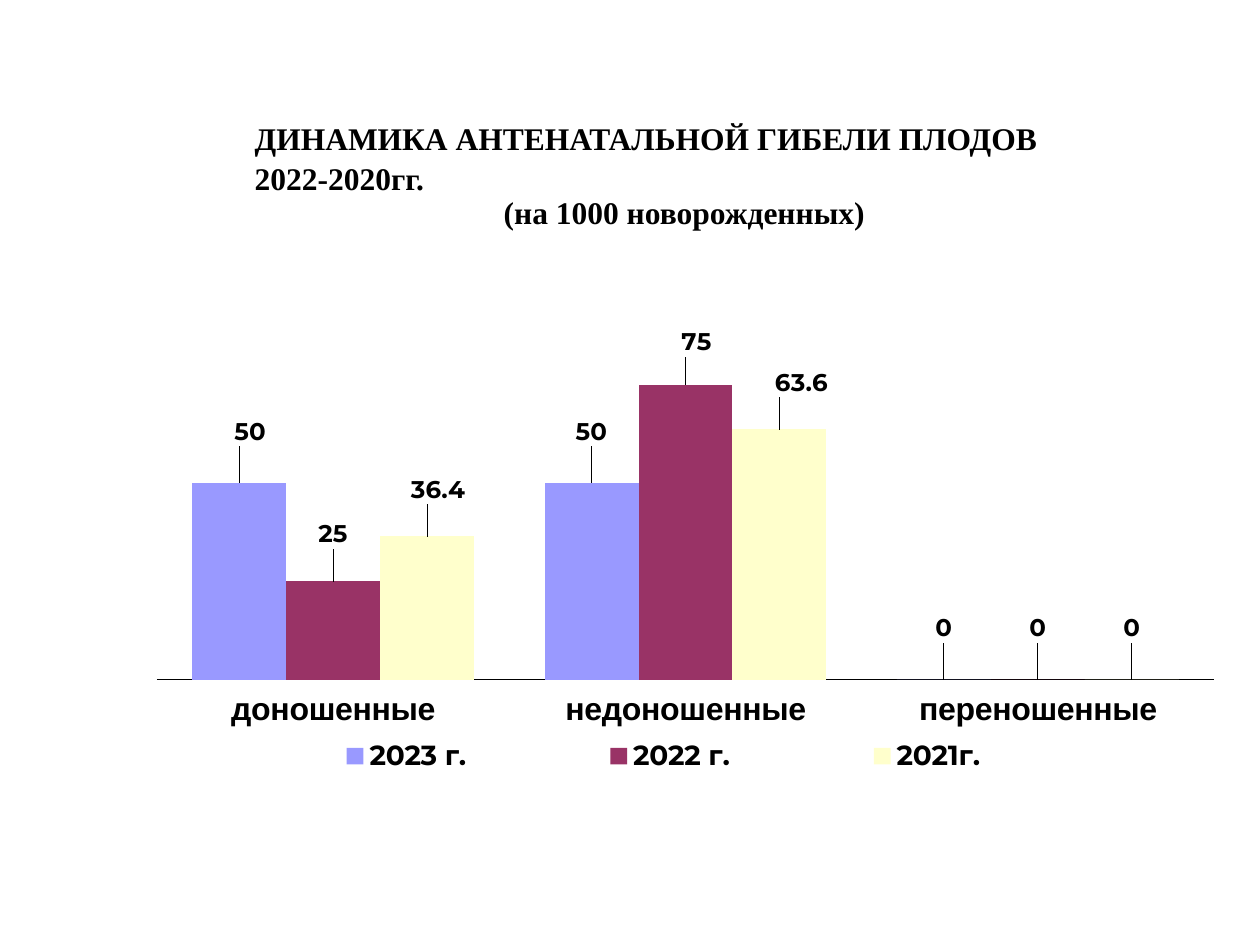
from lxml.etree import SubElement
from pptx import Presentation
from pptx.chart.data import CategoryChartData
from pptx.dml.color import RGBColor
from pptx.enum.chart import XL_CHART_TYPE, XL_LABEL_POSITION, XL_LEGEND_POSITION, XL_TICK_LABEL_POSITION, XL_TICK_MARK
from pptx.enum.text import MSO_ANCHOR, MSO_AUTO_SIZE, PP_ALIGN
from pptx.oxml.ns import qn
from pptx.util import Cm, Pt

BLACK = RGBColor(0x00, 0x00, 0x00)
LAVENDER = RGBColor(0x99, 0x99, 0xFF)
PLUM = RGBColor(0x99, 0x33, 0x66)
CREAM = RGBColor(0xFF, 0xFF, 0xCC)

CATEGORIES = ["доношенные", "недоношенные", "переношенные"]
YEARS = [
    ("2023 г.", (50, 50, 0), LAVENDER, [(0.01, -0.07), (0, -0.07), (0, -0.07)]),
    ("2022 г.", (25, 75, 0), PLUM, [(0, -0.06), (0.01, -0.05), (0, -0.07)]),
    ("2021г.", (36.4, 63.6, 0), CREAM, [(0.01, -0.06), (0.02, -0.06), (0, -0.07)]),
]


class SlideBuilder:
    """Holds the bold black style and the slide being filled."""

    def __init__(self, slide):
        self.slide = slide

    def style(self, font, name, size):
        font.name = name
        font.size = Pt(size)
        font.bold = True
        font.color.rgb = BLACK

    def place(self, parent, index, **parts):
        for old in parent.findall(qn("c:layout")):
            parent.remove(old)
        layout = parent.makeelement(qn("c:layout"), {})
        parent.insert(index, layout)
        manual = SubElement(layout, qn("c:manualLayout"))
        for tag, value in parts.items():
            SubElement(manual, qn(f"c:{tag}")).set("val", str(value))

    def title(self, heading, unit, left, top, width, height):
        title = self.slide.shapes.title
        title.left, title.top, title.width, title.height = left, top, width, height
        frame = title.text_frame
        frame.text = f"{heading}\n{unit}"
        frame.auto_size = MSO_AUTO_SIZE.NONE
        frame.word_wrap = True
        frame.vertical_anchor = MSO_ANCHOR.MIDDLE
        frame.margin_bottom = Cm(0.8)
        layout = ((PP_ALIGN.LEFT, 1.05), (PP_ALIGN.CENTER, 0.9))
        for paragraph, (alignment, spacing) in zip(frame.paragraphs, layout):
            paragraph.alignment = alignment
            paragraph.line_spacing = spacing
            paragraph.space_before = Pt(0)
            for run in paragraph.runs:
                self.style(run.font, "Times New Roman", 18)

    def column_chart(self, categories, years, left, top, width, height):
        data = CategoryChartData()
        data.categories = categories
        for name, values, _, _ in years:
            data.add_series(name, values)
        chart = self.slide.shapes.add_chart(
            XL_CHART_TYPE.COLUMN_CLUSTERED, left, top, width, height, data
        ).chart
        self.style(chart.font, "Arial", 13.3)
        chart.has_title = False
        plot = chart.plots[0]
        plot.gap_width = 75
        plot.overlap = 0
        plot.vary_by_categories = False
        self.axes(chart)
        self.legend(chart)
        self.place(chart._chartSpace.chart.plotArea, 0, layoutTarget="inner",
                   xMode="edge", yMode="edge", x=0.02, y=0.07, w=0.96, h=0.7)
        for series, (_, _, color, offsets) in zip(plot.series, years):
            series.format.fill.solid()
            series.format.fill.fore_color.rgb = color
            self.labels(series, offsets)

    def axes(self, chart):
        values = chart.value_axis
        values.visible = False
        values.has_major_gridlines = False
        values.minimum_scale, values.maximum_scale = 0, 80
        groups = chart.category_axis
        groups.tick_label_position = XL_TICK_LABEL_POSITION.LOW
        groups.major_tick_mark = XL_TICK_MARK.NONE
        groups.format.line.color.rgb = BLACK
        groups.format.line.width = Pt(0.42)
        self.style(groups.tick_labels.font, "Arial", 18.3)

    def legend(self, chart):
        chart.has_legend = True
        legend = chart.legend
        legend.position = XL_LEGEND_POSITION.BOTTOM
        legend.include_in_layout = False
        self.style(legend.font, "Montserrat", 16)
        self.place(legend._element, 1, xMode="edge", yMode="edge",
                   x=0.07, y=0.89, w=0.82, h=0.1)

    def labels(self, series, offsets):
        for index, _ in enumerate(offsets):
            label = series.points[index].data_label
            self.style(label.font, "Montserrat", 14)
            label.position = XL_LABEL_POSITION.OUTSIDE_END
        for element, (x, y) in zip(series._element.iter(qn("c:dLbl")), offsets):
            self.place(element, 1, x=x, y=y)


def main():
    presentation = Presentation()
    presentation.slide_width, presentation.slide_height = Cm(25.4), Cm(19.05)
    builder = SlideBuilder(presentation.slides.add_slide(presentation.slide_layouts[5]))
    builder.title("ДИНАМИКА АНТЕНАТАЛЬНОЙ ГИБЕЛИ ПЛОДОВ 2022-2020гг.",
                  "(на 1000 новорожденных)", Cm(4.88), Cm(2.9), Cm(17.83), Cm(1.9))
    builder.column_chart(CATEGORIES, YEARS, Cm(2.72), Cm(6.6), Cm(22.2), Cm(9.19))
    presentation.save("out.pptx")


if __name__ == "__main__":
    main()
